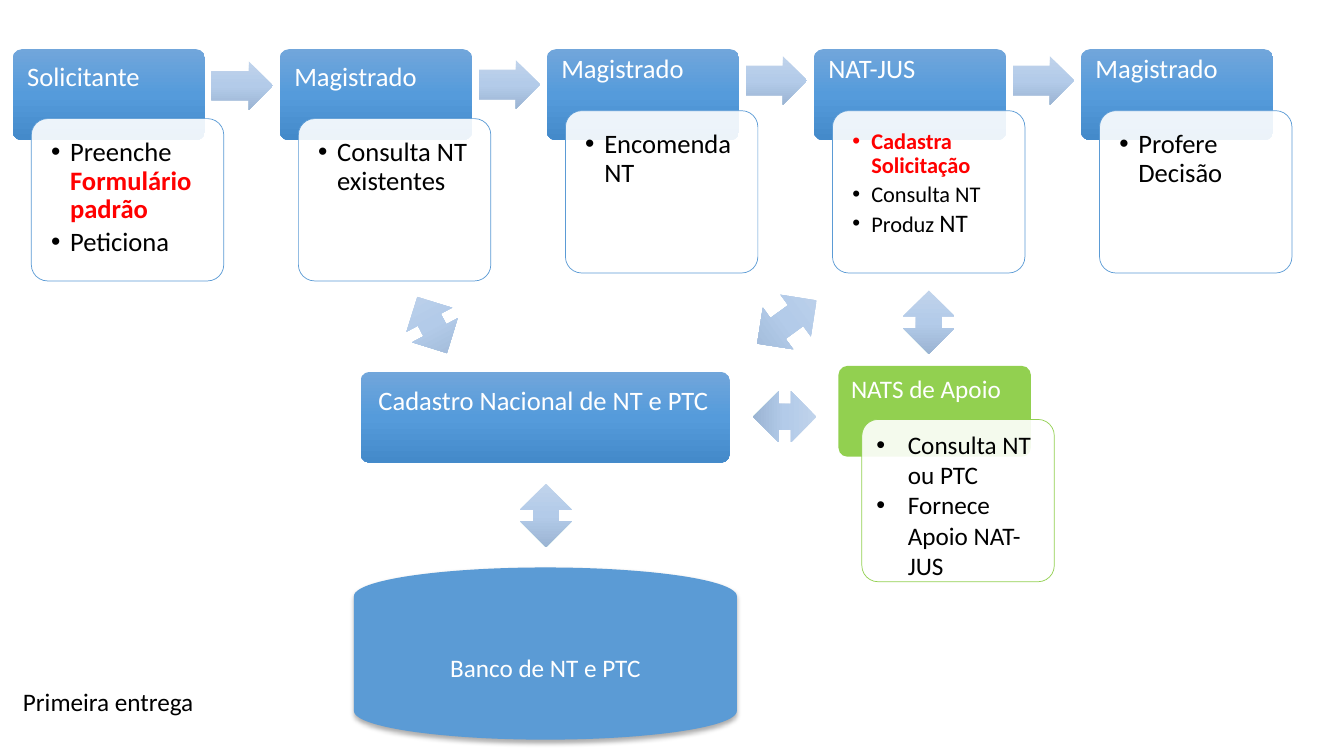
from copy import deepcopy

from lxml import etree
from pptx import Presentation, util as u
from pptx.dml import color
from pptx.enum import shapes, text
from pptx.oxml import ns

FORM = shapes.MSO_SHAPE
ALIGN = text.PP_ALIGN
ANCHOR = text.MSO_ANCHOR
BLUE = ("71A6DB", "559BDB", "448ACA")
PALE = ("C0D3EB", "B3CBE9", "9BB4D3")
EDGE, GREEN, RED = "5B9BD5", "92D050", "FF0000"
WHITE, BLACK = "FFFFFF", "000000"
HEAD, CARD = (4.85, 2.29), (4.85, 4.09)
STEP = 6.73


def rgb(code):
    return color.RGBColor.from_string(code)


def sub(node, tag, **attrs):
    return etree.SubElement(node, ns.qn(tag), **attrs)


def shade(form, codes):
    form.fill.gradient()
    form.fill.gradient_angle = 270
    stops = form._element.spPr.find(".//" + ns.qn("a:gsLst"))
    stops.insert(1, deepcopy(stops[0]))
    for stop, code, place in zip(form.fill.gradient_stops, codes, (0, 0.5, 1)):
        stop.color.rgb = rgb(code)
        stop.position = place


def add_form(slide, kind, spot, size, fill, edge=None, turn=0):
    form = slide.shapes.add_shape(kind, *map(u.Cm, spot + size))
    form.shadow.inherit = False
    form.rotation = turn
    if isinstance(fill, tuple):
        shade(form, fill)
    else:
        form.fill.solid()
        form.fill.fore_color.rgb = rgb(fill)
    if edge:
        form.line.color.rgb = rgb(edge)
        form.line.width = u.Pt(0.5)
    else:
        form.line.fill.background()
    return form


def set_frame(form, pads=(0.25, 0.13, 0.25, 0.13), anchor=ANCHOR.TOP):
    frame = form.text_frame
    frame.word_wrap = True
    frame.vertical_anchor = anchor
    (frame.margin_left, frame.margin_top,
     frame.margin_right, frame.margin_bottom) = map(u.Cm, pads)
    return frame


def write(frame, paras, align=ALIGN.LEFT, lead=None, after=0, dent=None):
    for i, runs in enumerate(paras):
        para = frame.add_paragraph() if i else frame.paragraphs[0]
        para.alignment = align
        para.space_after = u.Pt(after)
        if lead:
            para.line_spacing = lead
        if dent:
            props = para._p.get_or_add_pPr()
            props.set("marL", str(u.Cm(dent)))
            props.set("indent", str(-u.Cm(dent)))
            sub(props, "a:buFont", typeface="Arial")
            sub(props, "a:buChar", char="•")
        for words, size, code, bold in runs:
            run = para.add_run()
            run.text = words
            run.font.name = "Calibri"
            run.font.size = u.Pt(size)
            run.font.bold = bold
            run.font.color.rgb = rgb(code)


def plain(words, size=19, code=BLACK):
    return (words, size, code, False)


def strong(words, size=19):
    return (words, size, RED, True)


def add_head(slide, spot, label, size=HEAD, pads=(0.3, 0.3, 0.3, 0.2)):
    head = add_form(slide, FORM.ROUNDED_RECTANGLE, spot, size, BLUE)
    head.adjustments[0] = 0.1
    write(set_frame(head, pads), [[plain(label, 19, WHITE)]], lead=0.9, after=6.65)


def add_card(slide, spot, edge):
    card = add_form(slide, FORM.ROUNDED_RECTANGLE, spot, CARD, WHITE, edge)
    card.adjustments[0] = 0.1
    tint = card._element.spPr.find(ns.qn("a:solidFill"))[0]
    sub(tint, "a:alpha", val="90000")
    return card


def add_stage(slide, left, label, paras, drop, inset):
    add_head(slide, (left, 1.24), label, pads=(0.3, inset, 0.3, 0.2))
    card = add_card(slide, (left + 0.47, 1.24 + drop), EDGE)
    write(set_frame(card, (0.38,) * 4), paras, lead=0.9, after=2.8, dent=0.48)


def add_flow(slide, left, top):
    flow = add_form(slide, FORM.RIGHT_ARROW, (left, top), (1.55, 1.22), PALE)
    flow.adjustments[0] = 0.6


def add_link(slide, left, top, turn=0, tall=1.6):
    add_form(slide, FORM.UP_DOWN_ARROW, (left, top), (1.3, tall), PALE, turn=turn)


def add_bank(slide):
    bank = add_form(slide, FORM.FLOWCHART_MAGNETIC_DISK, (8.92, 14.3), (9.65, 4.34), EDGE)
    glow = sub(bank._element.spPr.find(ns.qn("a:effectLst")), "a:outerShdw",
               blurRad=str(u.Pt(3.5)), dist=str(u.Pt(2.2)), dir="5400000", rotWithShape="0")
    sub(sub(glow, "a:srgbClr", val=BLACK), "a:alpha", val="32000")
    write(set_frame(bank, anchor=ANCHOR.MIDDLE),
          [[plain("Banco de NT e PTC", 18, WHITE)]], ALIGN.CENTER)


def add_help(slide):
    head = add_form(slide, FORM.ROUNDED_RECTANGLE, (21.13, 9.22), HEAD, GREEN)
    head.adjustments[0] = 0.1
    write(set_frame(head), [[plain("NATS de Apoio", 18, WHITE)]])
    card = add_card(slide, (21.72, 10.57), GREEN)
    tasks = "Consulta NT ou PTC", "Fornece Apoio NAT-JUS"
    write(set_frame(card), [[plain(task, 18)] for task in tasks], dent=0.79)


def main():
    deck = Presentation()
    deck.slide_width, deck.slide_height = u.Cm(33.87), u.Cm(19.05)
    slide = deck.slides.add_slide(deck.slide_layouts[6])
    stages = [
        ("Solicitante", [[plain("Preenche "), strong("Formulário padrão")],
                         [plain("Peticiona")]], 1.75, 0.3),
        ("Magistrado", [[plain("Consulta NT existentes")]], 1.75, 0.3),
        ("Magistrado", [[plain("Encomenda NT")]], 1.55, 0.1),
        ("NAT-JUS", [[strong("Cadastra Solicitação", 16)],
                     [plain("Consulta NT", 16)],
                     [plain("Produz ", 16), plain("NT", 18)]], 1.55, 0.1),
        ("Magistrado", [[plain("Profere Decisão")]], 1.55, 0.1),
    ]
    for i, stage in enumerate(stages):
        add_stage(slide, 0.32 + i * STEP, *stage)
    for i, top in enumerate((1.55, 1.52, 1.42, 1.42)):
        add_flow(slide, 5.33 + i * STEP, top)
    add_bank(slide)
    add_head(slide, (9.09, 9.37), "Cadastro Nacional de NT e PTC",
             (9.3, 2.29), (0.38, 0.33, 0.23, 0.2))
    add_link(slide, 10.24, 7.39, 332.2)
    add_link(slide, 13.11, 12.19)
    add_link(slide, 19.18, 7.19, 53.9, 1.85)
    add_link(slide, 19.13, 9.7, 90)
    add_link(slide, 22.76, 7.32)
    add_help(slide)
    note = slide.shapes.add_textbox(*map(u.Cm, (0.33, 17.17, 4.83, 1.02)))
    write(set_frame(note), [[plain("Primeira entrega", 18)]])
    deck.save("out.pptx")


if __name__ == "__main__":
    main()
